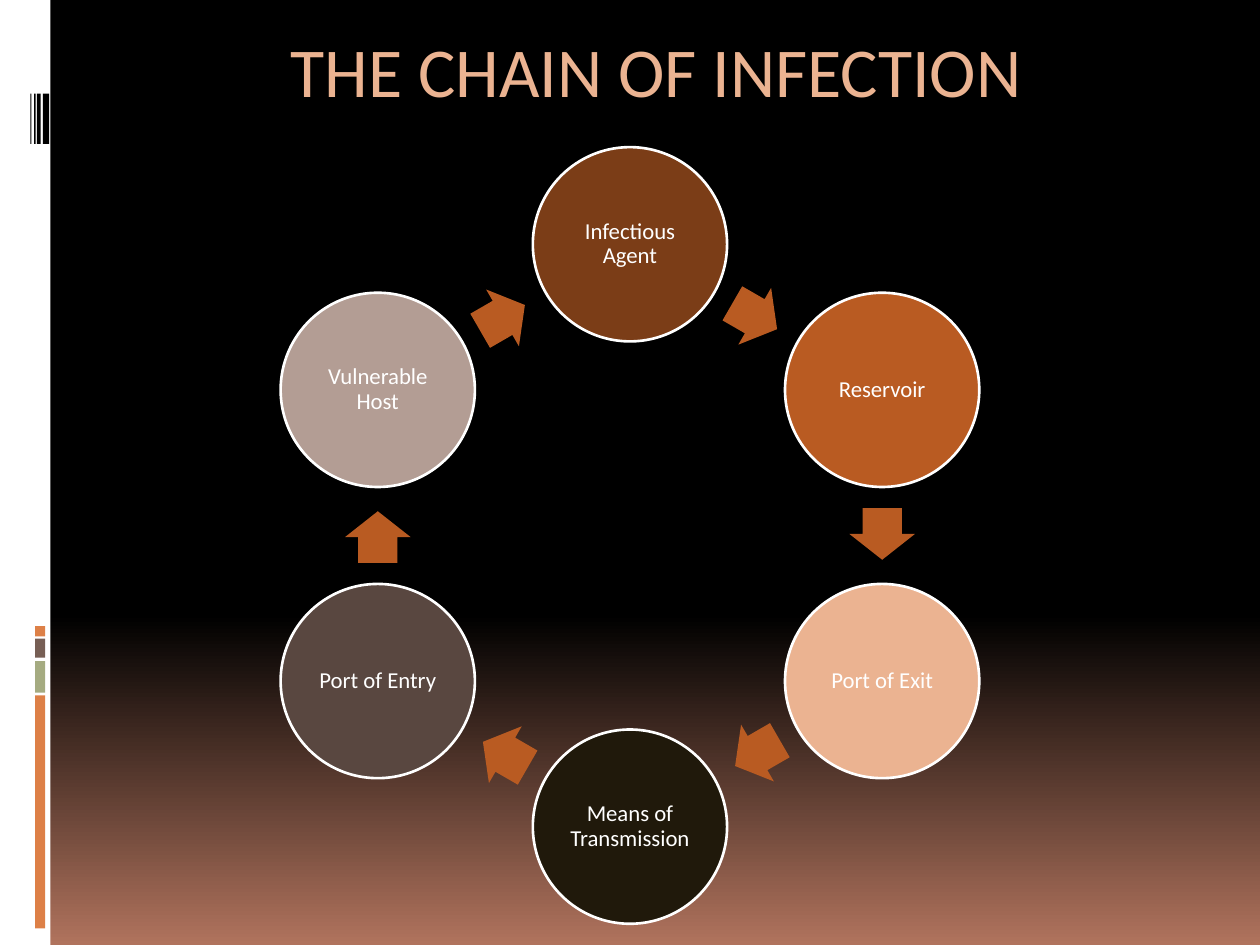
import math

from pptx import Presentation
from pptx.dml.color import RGBColor
from pptx.enum.shapes import MSO_SHAPE
from pptx.enum.text import MSO_ANCHOR, MSO_AUTO_SIZE, PP_ALIGN
from pptx.util import Pt

RECTANGLE = MSO_SHAPE.RECTANGLE
OVAL = MSO_SHAPE.OVAL
RIGHT_ARROW = MSO_SHAPE.RIGHT_ARROW
MIDDLE = MSO_ANCHOR.MIDDLE
CENTER = PP_ALIGN.CENTER
GROW = MSO_AUTO_SIZE.SHAPE_TO_FIT_TEXT

FONT = "Calibri"
WHITE, BLACK = "FFFFFF", "000000"
RUST, PEACH = "B95B22", "EBB391"


def rgb(color):
    return RGBColor.from_string(color)


def add_filled(kind, left, top, width, height, color):
    """Add a preset shape with a plain fill, no outline and no shadow."""
    shape = slide.shapes.add_shape(kind, Pt(left), Pt(top), Pt(width), Pt(height))
    shape.shadow.inherit = False
    shape.fill.solid()
    shape.fill.fore_color.rgb = rgb(color)
    shape.line.fill.background()
    return shape


prs = Presentation()
prs.slide_width, prs.slide_height = Pt(720), Pt(540)
slide = prs.slides.add_slide(prs.slide_layouts[6])

# Background: black down to 65 %, then fading to brown
backdrop = slide.background.fill
backdrop.gradient()
backdrop.gradient_angle = 270
for stop, (position, color) in zip(backdrop.gradient_stops, [(0.65, BLACK), (1, "B0735D")]):
    stop.position = position
    stop.color.rgb = rgb(color)

# Side strip with its coloured blocks and black bars
add_filled(RECTANGLE, 0, 0, 28.8, 540, WHITE)
for top, height, color in [(397.4, 133.2, "DD8047"), (377.8, 18, "A5AB81"),
                           (365, 10.8, "775F55"), (357.8, 5.8, "DD8047")]:
    add_filled(RECTANGLE, 20, top, 5.8, height, color)
for left, width in [(24.5, 3.6), (21.1, 2.2), (19.5, 0.9), (17.4, 0.6)]:
    add_filled(RECTANGLE, left, 53.5, width, 28.8, BLACK)

# Cycle: links sit every 60 degrees, clockwise from the top
links = [
    ("Infectious Agent", "7B3D17"),
    ("Reservoir", RUST),
    ("Port of Exit", PEACH),
    ("Means of Transmission", "20190B"),
    ("Port of Entry", "594740"),
    ("Vulnerable Host", "B39D94"),
]
CENTER_X, CENTER_Y, RADIUS = 360, 306, 166.4
DIAMETER = 111
ARROW_LENGTH, ARROW_WIDTH = 29.5, 37.5
ARROW_LAG = 0.9  # arrows sit slightly before the midpoint between links
step = 360 / len(links)
arrow_radius = RADIUS * math.cos(math.radians(step / 2))

for i, (label, color) in enumerate(links):
    angle = math.radians(i * step - 90)
    x = CENTER_X + RADIUS * math.cos(angle)
    y = CENTER_Y + RADIUS * math.sin(angle)
    link = add_filled(OVAL, x - DIAMETER / 2, y - DIAMETER / 2, DIAMETER, DIAMETER, color)
    link.line.color.rgb = rgb(WHITE)
    link.line.width = Pt(1.5)
    frame = link.text_frame
    frame.word_wrap = True
    frame.vertical_anchor = MIDDLE
    frame.margin_left = frame.margin_right = frame.margin_top = frame.margin_bottom = Pt(1.3)
    name = frame.paragraphs[0]
    name.text = label
    name.alignment = CENTER
    name.line_spacing = 0.9
    name.font.name, name.font.size = FONT, Pt(13)
    name.font.color.rgb = rgb(WHITE)

    heading = (i + 0.5) * step
    turn = math.radians(heading)
    x = CENTER_X + arrow_radius * math.sin(turn) - ARROW_LAG * math.cos(turn)
    y = CENTER_Y - arrow_radius * math.cos(turn) - ARROW_LAG * math.sin(turn)
    arrow = add_filled(RIGHT_ARROW, x - ARROW_LENGTH / 2, y - ARROW_WIDTH / 2,
                       ARROW_LENGTH, ARROW_WIDTH, RUST)
    arrow.adjustments[0], arrow.adjustments[1] = 0.6, 0.5
    arrow.rotation = heading

# Title
title_box = slide.shapes.add_textbox(Pt(144), Pt(12), Pt(462), Pt(55.5))
title_box.text_frame.word_wrap = True
title_box.text_frame.auto_size = GROW
title = title_box.text_frame.paragraphs[0]
title.text = "THE CHAIN OF INFECTION"
title.alignment = CENTER
title.font.name, title.font.size = FONT, Pt(40)
title.font.color.rgb = rgb(PEACH)

prs.save("out.pptx")
